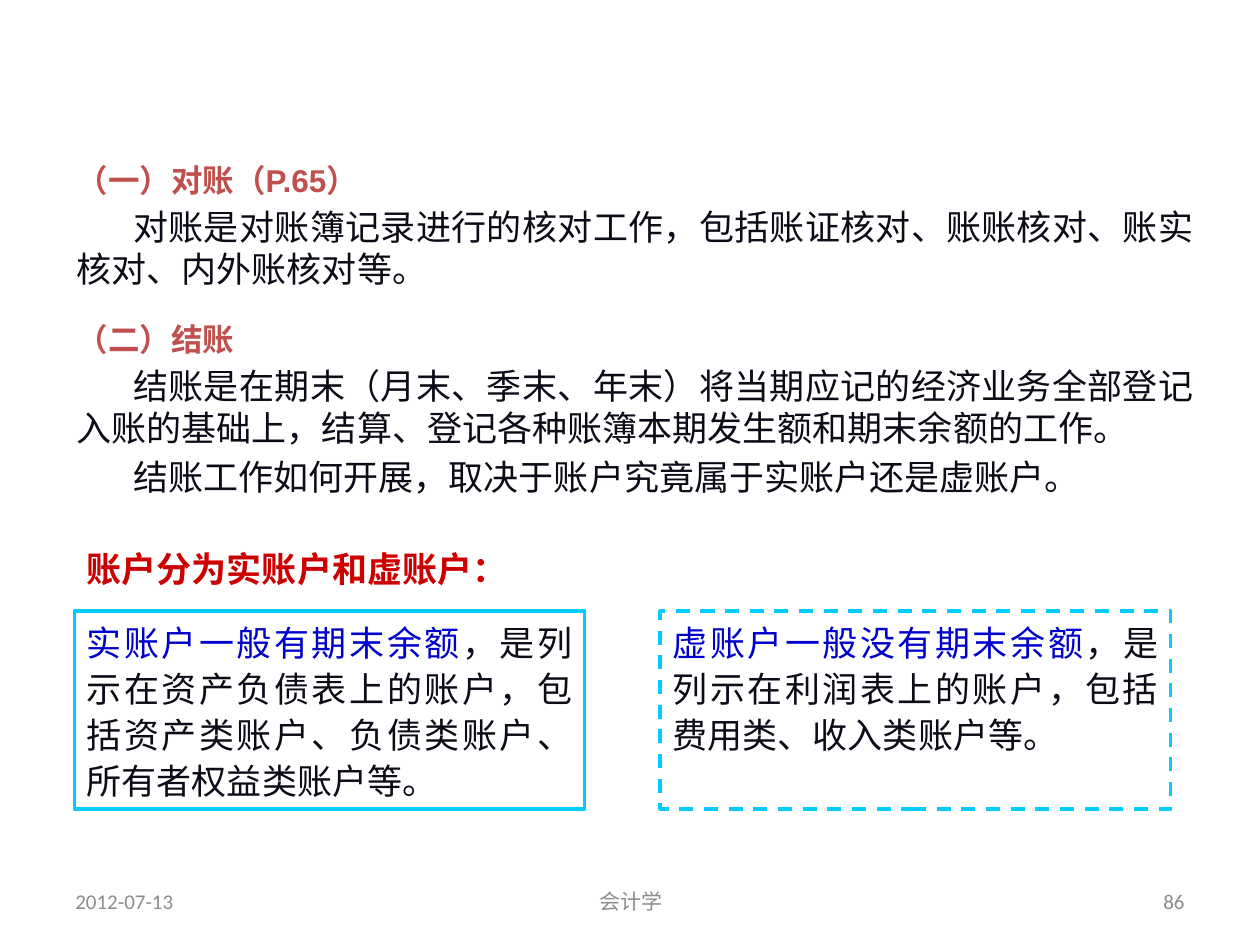
from dataclasses import dataclass

from pptx import Presentation
from pptx.dml.color import RGBColor
from pptx.enum.dml import MSO_LINE
from pptx.enum.shapes import MSO_SHAPE
from pptx.enum.text import MSO_ANCHOR, PP_ALIGN
from pptx.util import Inches, Pt


@dataclass(frozen=True)
class Theme:
    heading: str = "C0504D"
    body: str = "0B0C17"
    alert: str = "CC0000"
    accent: str = "0000CC"
    border: str = "00CCFF"
    muted: str = "8C8C8C"
    body_size: int = 20
    heading_size: int = 18
    footer_size: int = 12
    text_font: str = "Arial"
    card_font: str = "Calibri"


theme = Theme()
deck = Presentation()
deck.slide_width, deck.slide_height = Inches(10), Inches(7.5)
page = deck.slides.add_slide(deck.slide_layouts[6])

# Grid of 100 columns by 75 rows
column, row = deck.slide_width / 100, deck.slide_height / 75


def cell(left, top, width, height):
    return [round(n) for n in (left * column, top * row, width * column, height * row)]


def style(font, size, color, name, bold=False):
    font.size, font.name, font.bold = Pt(size), name, bold
    font.color.rgb = RGBColor.from_string(color)


# Footer: date, course, page number
for text, left, width, align in [
    ("2012-07-13", 5, 23.3, PP_ALIGN.LEFT),
    ("会计学", 34.2, 31.7, PP_ALIGN.CENTER),
    ("86", 71.7, 23.3, PP_ALIGN.RIGHT),
]:
    frame = page.shapes.add_textbox(*cell(left, 69.5, width, 4)).text_frame
    frame.word_wrap = True
    frame.vertical_anchor = MSO_ANCHOR.MIDDLE
    para = frame.paragraphs[0]
    para.text, para.alignment = text, align
    style(para.font, theme.footer_size, theme.muted, theme.card_font)

# Sections: a heading followed by indented paragraphs
for top, height, heading, *details in [
    (12.3, 12.3, "（一）对账（P.65）",
     "对账是对账簿记录进行的核对工作，包括账证核对、账账核对、账实核对、内外账核对等。"),
    (24.9, 16.3, "（二）结账",
     "结账是在期末（月末、季末、年末）将当期应记的经济业务全部登记入账的基础上，"
     "结算、登记各种账簿本期发生额和期末余额的工作。",
     "结账工作如何开展，取决于账户究竟属于实账户还是虚账户。"),
]:
    frame = page.shapes.add_textbox(*cell(5.1, top, 90.6, height)).text_frame
    frame.word_wrap = True
    para = frame.paragraphs[0]
    para.text = heading
    style(para.font, theme.heading_size, theme.heading, theme.text_font, bold=True)
    for detail in details:
        para = frame.add_paragraph()
        para.text = detail
        para._p.get_or_add_pPr().set("indent", str(round(4.5 * column)))
        style(para.font, theme.body_size, theme.body, theme.text_font)
    for para in frame.paragraphs:
        para.alignment, para.space_before = PP_ALIGN.JUSTIFY, Pt(4)

# Lead-in to the two kinds of account
frame = page.shapes.add_textbox(*cell(5.9, 43, 35.6, 4.3)).text_frame
frame.word_wrap = False
para = frame.paragraphs[0]
para.text = "账户分为实账户和虚账户："
style(para.font, theme.body_size, theme.alert, theme.text_font, bold=True)

# Cards: real accounts solid, nominal accounts dashed
for index, (lead, rest, dash) in enumerate([
    ("实账户一般有期末余额",
     "，是列示在资产负债表上的账户，包括资产类账户、负债类账户、所有者权益类账户等。",
     MSO_LINE.SOLID),
    ("虚账户一般没有期末余额",
     "，是列示在利润表上的账户，包括费用类、收入类账户等。",
     MSO_LINE.DASH),
]):
    card = page.shapes.add_shape(
        MSO_SHAPE.RECTANGLE, *cell(5.9 + 46.5 * index, 48.5, 40.5, 15.7))
    card.shadow.inherit = False
    card.fill.background()
    card.line.color.rgb = RGBColor.from_string(theme.border)
    card.line.width, card.line.dash_style = Pt(2), dash
    frame = card.text_frame
    frame.word_wrap = True
    frame.vertical_anchor = MSO_ANCHOR.TOP
    para = frame.paragraphs[0]
    para.alignment, para.line_spacing, para.space_before = PP_ALIGN.JUSTIFY, 1.1, Pt(4)
    for text, color in [(lead, theme.accent), (rest, theme.body)]:
        span = para.add_run()
        span.text = text
        style(span.font, theme.body_size, color, theme.card_font)

deck.save("out.pptx")
